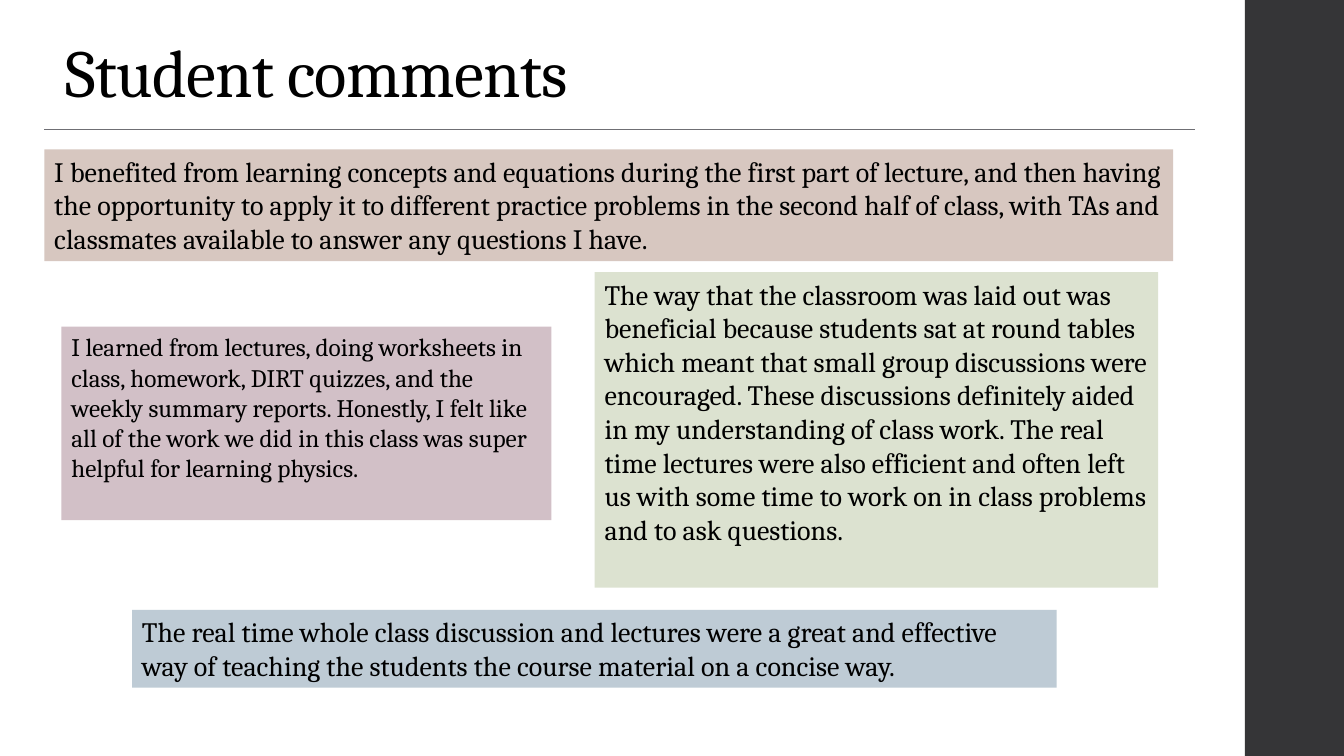
from lxml import etree
from pptx import Presentation
from pptx.dml.color import RGBColor
from pptx.enum.shapes import MSO_CONNECTOR, MSO_SHAPE
from pptx.enum.text import MSO_ANCHOR, MSO_AUTO_SIZE, PP_ALIGN
from pptx.oxml.ns import qn
from pptx.util import Pt

RECTANGLE = MSO_SHAPE.RECTANGLE
STRAIGHT = MSO_CONNECTOR.STRAIGHT
TOP, MIDDLE = MSO_ANCHOR.TOP, MSO_ANCHOR.MIDDLE
LEFT = PP_ALIGN.LEFT
NO_AUTOFIT = MSO_AUTO_SIZE.NONE

SLIDE_WIDTH, SLIDE_HEIGHT = 960, 540
FONT = "Cambria"
BLACK = RGBColor(0x00, 0x00, 0x00)
CHARCOAL = RGBColor(0x35, 0x35, 0x37)
GRAY = RGBColor(0x6F, 0x6F, 0x74)
SAGE = RGBColor(0xDC, 0xE2, 0xD0)
CLAY = RGBColor(0xD7, 0xC7, 0xC0)
STEEL = RGBColor(0xBE, 0xCB, 0xD5)
MAUVE = RGBColor(0xD2, 0xC0, 0xC7)

# Each comment: box (left, top, width, height), fill, text size, text
COMMENTS = [
    ((424.8, 194.4, 402.5, 225.4), SAGE, 20,
     "The way that the classroom was laid out was beneficial because students "
     "sat at round tables which meant that small group discussions were "
     "encouraged. These discussions definitely aided in my understanding of "
     "class work. The real time lectures were also efficient and often left us "
     "with some time to work on in class problems and to ask questions."),
    ((31.7, 106.6, 806.4, 79.9), CLAY, 20,
     "I benefited from learning concepts and equations during the first part of "
     "lecture, and then having the opportunity to apply it to different practice "
     "problems in the second half of class, with TAs and classmates available to "
     "answer any questions I have."),
    ((94.3, 435.6, 660.5, 55.6), STEEL, 20,
     "The real time whole class discussion and lectures were a great and "
     "effective way of teaching the students the course material on a concise way."),
    ((43.9, 233.3, 349.9, 138.2), MAUVE, 18,
     "I learned from lectures, doing worksheets in class, homework, DIRT quizzes, "
     "and the weekly summary reports. Honestly, I felt like all of the work we "
     "did in this class was super helpful for learning physics."),
]


def write_text(shape, text, *, size, anchor=TOP, line_spacing=1.0, tracking=None):
    """Fill the shape with one paragraph; tracking is in hundredths of a point."""
    frame = shape.text_frame
    frame.word_wrap = True
    frame.auto_size = NO_AUTOFIT
    frame.vertical_anchor = anchor
    paragraph = frame.paragraphs[0]
    paragraph.alignment = LEFT
    paragraph.line_spacing = line_spacing
    run = paragraph.add_run()
    run.text = text
    run.font.name = FONT
    run.font.size = Pt(size)
    run.font.color.rgb = BLACK
    if tracking is not None:
        run.font._element.set("spc", str(tracking))


def add_panel(slide, box, fill):
    panel = slide.shapes.add_shape(RECTANGLE, *map(Pt, box))
    panel.shadow.inherit = False
    panel.fill.solid()
    panel.fill.fore_color.rgb = fill
    panel.line.fill.background()
    return panel


def add_heading(slide, box, text):
    """Place the title in the box, with a rule below it."""
    left, top, width, height = box
    title = slide.shapes.title
    title.left, title.top, title.width, title.height = map(Pt, box)
    write_text(title, text, size=48, anchor=MIDDLE, line_spacing=0.9, tracking=-50)

    rule_left, rule_top = left - 7.9, top + height + 5.8
    rule = slide.shapes.add_connector(
        STRAIGHT, Pt(rule_left), Pt(rule_top), Pt(rule_left + 822.2), Pt(rule_top))
    rule.line.color.rgb = GRAY
    rule.line.width = Pt(0.75)
    etree.SubElement(rule._element.spPr, qn("a:effectLst"))


def add_comment(slide, box, fill, size, text):
    write_text(add_panel(slide, box, fill), text, size=size)


def build_comments_slide(presentation):
    slide = presentation.slides.add_slide(presentation.slide_layouts[5])
    sidebar_left = 889.2
    add_panel(slide, (sidebar_left, 0, SLIDE_WIDTH - sidebar_left, SLIDE_HEIGHT), CHARCOAL)
    add_heading(slide, (39.6, 22.3, 828, 64.1), "Student comments")
    for comment in COMMENTS:
        add_comment(slide, *comment)


def main():
    presentation = Presentation()
    presentation.slide_width = Pt(SLIDE_WIDTH)
    presentation.slide_height = Pt(SLIDE_HEIGHT)
    build_comments_slide(presentation)
    presentation.save("out.pptx")


if __name__ == "__main__":
    main()
